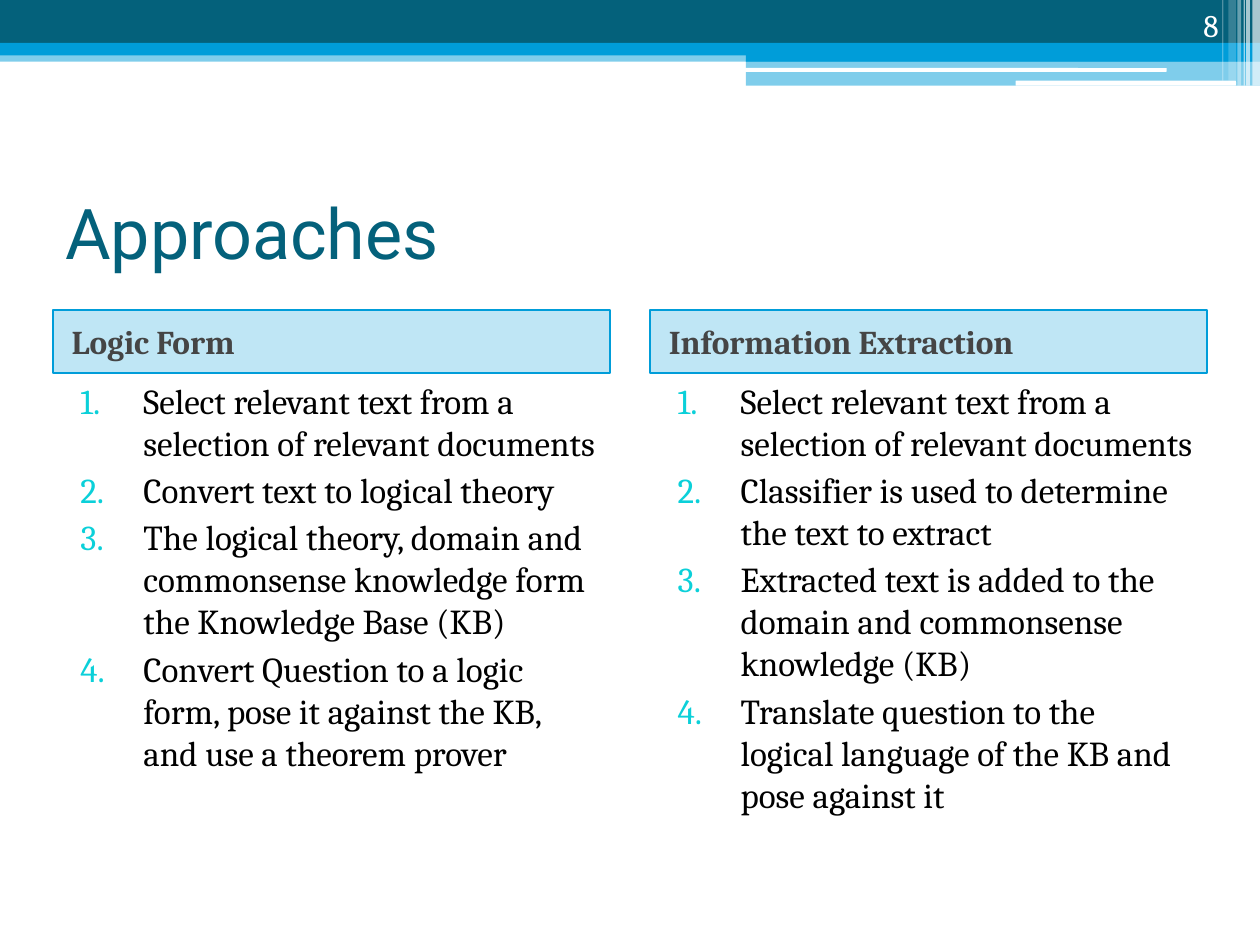
import pptx
import pptx.util
import pptx.dml.color
import pptx.enum.shapes
import pptx.enum.text
import pptx.oxml
import pptx.oxml.ns

EMU_PER_PX = 9144
SHAPE = pptx.enum.shapes.MSO_SHAPE
ANCHOR = pptx.enum.text.MSO_ANCHOR
ALIGN = pptx.enum.text.PP_ALIGN


def px(length):
    return pptx.util.Emu(length * EMU_PER_PX)


def color(value):
    return pptx.dml.color.RGBColor.from_string(value)


class Deck:
    body_font = "Cambria"
    title_font = "Roboto"
    teal = "04617B"
    blue = "009DD9"
    white = "FFFFFF"
    black = "000000"
    gray = "454545"
    number_color = "0BD0D9"

    def __init__(self, width, height):
        self.presentation = pptx.Presentation()
        self.presentation.slide_width = px(width)
        self.presentation.slide_height = px(height)
        self.slide = self.presentation.slides.add_slide(self.presentation.slide_layouts[6])

    def band(self, box, fill, opacity=100, kind=SHAPE.RECTANGLE):
        band = self.slide.shapes.add_shape(kind, *map(px, box))
        band.shadow.inherit = False
        band.fill.solid()
        band.fill.fore_color.rgb = color(fill)
        if opacity < 100:
            tint = band._element.spPr.find(".//" + pptx.oxml.ns.qn("a:srgbClr"))
            alpha = pptx.oxml.parse_xml(
                f'<a:alpha {pptx.oxml.ns.nsdecls("a")} val="{opacity * 1000}"/>')
            tint.append(alpha)
        band.line.fill.background()
        return band

    def set_lines(self, holder, lines, size, ink, font=None, bold=False,
                  anchor=ANCHOR.TOP, align=ALIGN.LEFT, before=0):
        frame = holder.text_frame
        frame.word_wrap = True
        frame.vertical_anchor = anchor
        frame.text = "\n".join(lines)
        for paragraph in frame.paragraphs:
            paragraph.alignment = align
            paragraph.space_before = pptx.util.Pt(before)
            for run in paragraph.runs:
                run.font.name = font or self.body_font
                run.font.size = pptx.util.Pt(size)
                run.font.bold = bold
                run.font.color.rgb = color(ink)
        return frame

    def text(self, box, lines, size, ink, **style):
        holder = self.slide.shapes.add_textbox(*map(px, box))
        return self.set_lines(holder, lines, size, ink, **style)

    def heading(self, box, label):
        heading = self.band(box, self.blue, 25)
        heading.line.color.rgb = color(self.blue)
        heading.line.width = pptx.util.Pt(1)
        frame = self.set_lines(heading, [label], 19, self.gray, bold=True,
                               anchor=ANCHOR.MIDDLE, before=3)
        frame.paragraphs[0]._p.get_or_add_pPr().set("marL", str(px(5)))

    def numbered_list(self, box, steps):
        frame = self.text(box, steps, 20, self.black, before=3)
        namespace = pptx.oxml.ns.nsdecls("a")
        for paragraph in frame.paragraphs:
            properties = paragraph._p.get_or_add_pPr()
            properties.set("marL", str(px(62)))
            properties.set("indent", str(px(-50)))
            for bullet in (
                f'<a:buClr {namespace}><a:srgbClr val="{self.number_color}"/></a:buClr>',
                f'<a:buFont {namespace} typeface="{self.body_font}"/>',
                f'<a:buAutoNum {namespace} type="arabicPeriod"/>',
            ):
                properties.append(pptx.oxml.parse_xml(bullet))


def main():
    deck = Deck(1000, 750)

    deck.band((0, 40, 1000, 9), deck.blue, 50)
    deck.band((0, 0, 1000, 34), deck.teal)
    deck.band((0, 34, 1000, 10), deck.blue)
    deck.band((592, 39, 408, 10), deck.blue)
    deck.band((592, 48, 408, 20), deck.blue, 50)
    for highlight in ((591, 54, 335, 3), (806, 64, 175, 4)):
        deck.band(highlight, deck.white, kind=SHAPE.ROUNDED_RECTANGLE)
    for left, width, height, opacity in (
        (994, 6, 68, 65), (989, 3, 68, 65), (987, 1, 68, 60),
        (982, 3, 68, 40), (975, 6, 64, 20), (970, 1, 64, 30),
    ):
        deck.band((left, 0, width, height), deck.white, opacity)

    deck.text((42, 125, 917, 117), ["Approaches"], 40, deck.teal,
              font=deck.title_font, anchor=ANCHOR.MIDDLE)

    approaches = {
        "Logic Form": [
            "Select relevant text from a selection of relevant documents",
            "Convert text to logical theory",
            "The logical theory, domain and commonsense knowledge form the Knowledge Base (KB)",
            "Convert Question to a logic form, pose it against the KB, and use a theorem prover",
        ],
        "Information Extraction": [
            "Select relevant text from a selection of relevant documents",
            "Classifier is used to determine the text to extract",
            "Extracted text is added to the domain and commonsense knowledge (KB)",
            "Translate question to the logical language of the KB and pose against it",
        ],
    }
    for column, (label, steps) in enumerate(approaches.items()):
        left = 42 + column * 474
        deck.heading((left, 246, 442, 50), label)
        deck.numbered_list((left, 296, 442, 425), steps)

    deck.text((894, 0, 83, 40), ["8"], 18, deck.white,
              anchor=ANCHOR.BOTTOM, align=ALIGN.RIGHT)

    deck.presentation.save("out.pptx")


if __name__ == "__main__":
    main()
